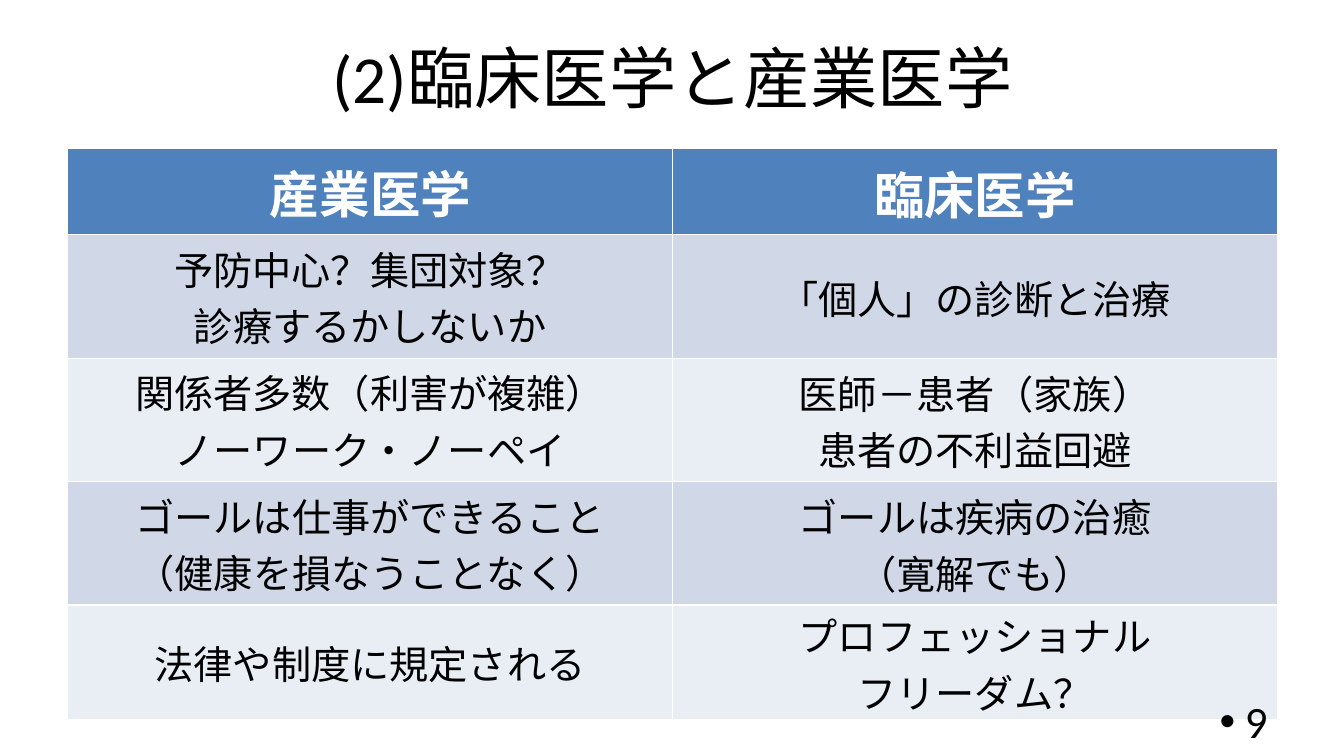
from lxml.etree import SubElement
from pptx import Presentation
from pptx.dml.color import RGBColor
from pptx.enum.text import MSO_ANCHOR as Anchor, PP_ALIGN as Align
from pptx.oxml.ns import qn
from pptx.util import Inches, Pt

COLORS = {
    "text": "000000",
    "header_text": "FFFFFF",
    "header": "4F81BD",
    "band_dark": "D0D8E8",
    "band_light": "E9EDF4",
}

COMPARISON = [
    ("産業医学", "臨床医学"),
    ("予防中心？集団対象？\n診療するかしないか", "「個人」の診断と治療"),
    ("関係者多数（利害が複雑）\nノーワーク・ノーペイ", "医師－患者（家族）\n患者の不利益回避"),
    ("ゴールは仕事ができること\n（健康を損なうことなく）", "ゴールは疾病の治癒\n（寛解でも）"),
    ("法律や制度に規定される", "プロフェッショナル\nフリーダム？"),
]
ROW_HEIGHTS = [0.86, 1.13, 1.13, 1.13, 1.12]
# Left, top, right, bottom for each column
CELL_MARGINS = [(0.1, 0.05, 0.1, 0.05), (0.01, 0.01, 0.01, 0)]


def color(name):
    return RGBColor.from_string(COLORS[name])


def format_text(frame, size, align, font="Calibri", ink="text", bold=False):
    frame.word_wrap = True
    for paragraph in frame.paragraphs:
        paragraph.alignment = align
        paragraph.font.name = font
        paragraph.font.size = Pt(size)
        paragraph.font.bold = bold
        paragraph.font.color.rgb = color(ink)


def add_title(slide, text):
    title = slide.shapes.title
    title.left, title.top = Inches(0.67), Inches(0.3)
    title.width, title.height = Inches(12), Inches(0.93)
    title.text_frame.text = text
    title.text_frame.vertical_anchor = Anchor.MIDDLE
    format_text(title.text_frame, 48, Align.CENTER)


def fill_cell(cell, text, row, column):
    cell.text = text
    cell.vertical_anchor = Anchor.MIDDLE
    (cell.margin_left, cell.margin_top,
     cell.margin_right, cell.margin_bottom) = map(Inches, CELL_MARGINS[column])
    cell.fill.solid()
    if row == 0:
        cell.fill.fore_color.rgb = color("header")
        format_text(cell.text_frame, 36, Align.CENTER, ink="header_text", bold=True)
    else:
        cell.fill.fore_color.rgb = color("band_dark" if row % 2 else "band_light")
        format_text(cell.text_frame, 28, Align.CENTER, font=("Calibri", "Arial")[column])


def add_comparison(slide):
    table = slide.shapes.add_table(
        len(COMPARISON), 2, Inches(0.67), Inches(1.47),
        Inches(12), Inches(sum(ROW_HEIGHTS))).table
    for row, (texts, height) in enumerate(zip(COMPARISON, ROW_HEIGHTS)):
        table.rows[row].height = Inches(height)
        for column, text in enumerate(texts):
            fill_cell(table.cell(row, column), text, row, column)


def add_page_number(slide, number):
    box = slide.shapes.add_textbox(Inches(9.56), Inches(6.95), Inches(3.11), Inches(0.4))
    frame = box.text_frame
    frame.text = number
    frame.vertical_anchor = Anchor.MIDDLE
    format_text(frame, 32, Align.RIGHT)
    paragraph = frame.paragraphs[0]
    paragraph.space_before = Pt(6.4)
    # Bullet with a hanging indent
    properties = paragraph._p.get_or_add_pPr()
    properties.set("marL", str(Inches(0.25)))
    properties.set("indent", str(-Inches(0.25)))
    bullet_font = SubElement(properties, qn("a:buFont"))
    bullet_font.set("typeface", "Arial")
    SubElement(properties, qn("a:buChar")).set("char", "•")
    # Run defaults must follow the bullet in the schema order
    properties.append(properties.find(qn("a:defRPr")))


def main():
    deck = Presentation()
    deck.slide_width, deck.slide_height = Inches(13.33), Inches(7.5)
    slide = deck.slides.add_slide(deck.slide_layouts[5])
    add_title(slide, "(2)臨床医学と産業医学")
    add_comparison(slide)
    add_page_number(slide, "9")
    deck.save("out.pptx")


if __name__ == "__main__":
    main()
